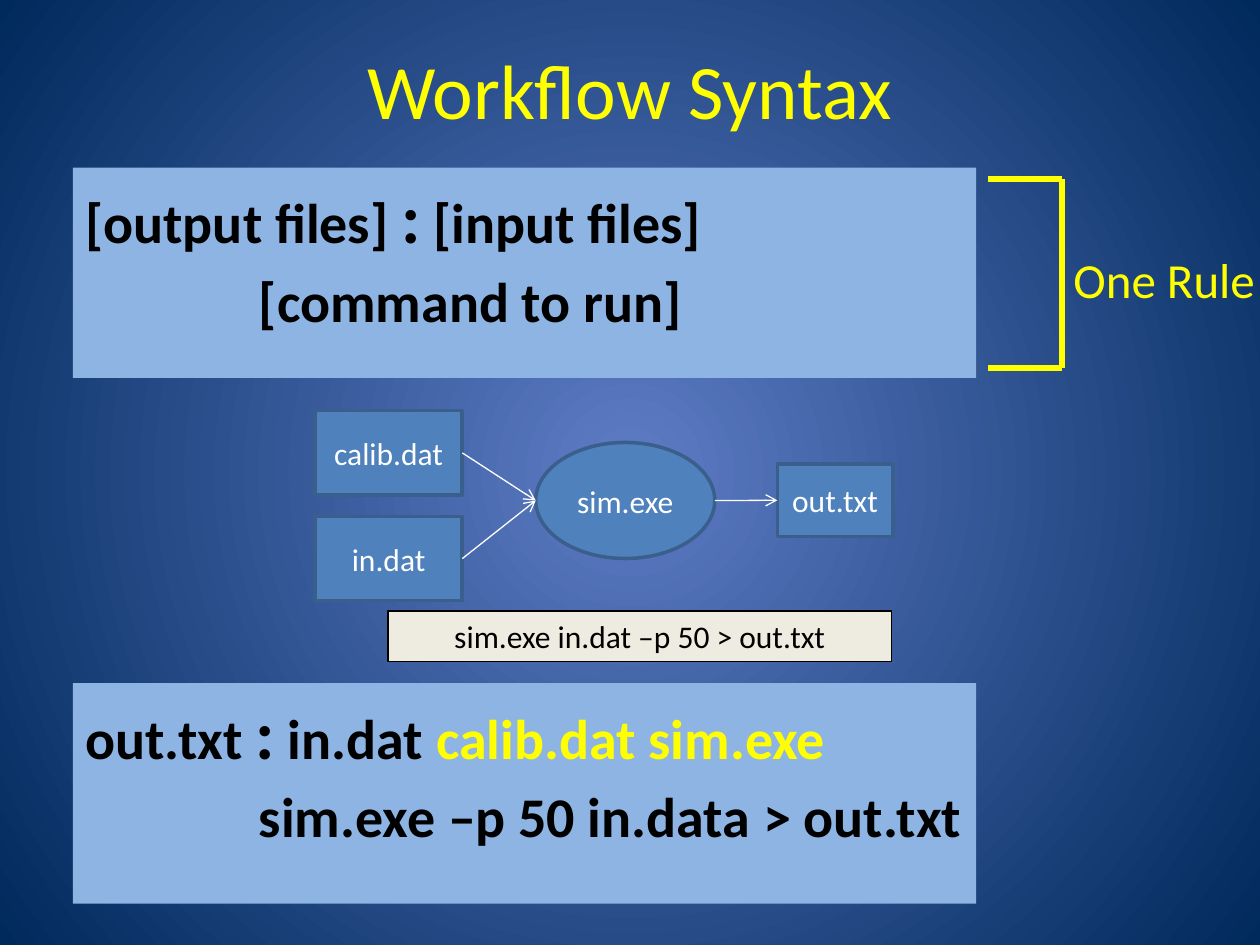
from lxml import etree
from pptx import Presentation
from pptx.dml.color import RGBColor
from pptx.enum.shapes import MSO_CONNECTOR, MSO_SHAPE
from pptx.enum.text import MSO_ANCHOR, PP_ALIGN
from pptx.oxml import parse_xml
from pptx.oxml.ns import qn
from pptx.util import Cm, Pt

RECT, OVAL = MSO_SHAPE.RECTANGLE, MSO_SHAPE.OVAL
LINE = MSO_CONNECTOR.STRAIGHT
CENTER, LEFT = PP_ALIGN.CENTER, PP_ALIGN.LEFT
MIDDLE, TOP = MSO_ANCHOR.MIDDLE, MSO_ANCHOR.TOP
FONT = "Calibri"
YELLOW, BLACK, WHITE = "FFFF00", "000000", "FFFFFF"
BLUE, EDGE, PALE, CREAM = "4F81BD", "3A5F8C", "8EB4E3", "EEECE1"
GLOW = """<a:gradFill xmlns:a="http://schemas.openxmlformats.org/drawingml/2006/main"
 rotWithShape="1"><a:gsLst>
<a:gs pos="0"><a:srgbClr val="5E7CC5"/></a:gs>
<a:gs pos="100000"><a:srgbClr val="00295C"/></a:gs></a:gsLst>
<a:path path="circle"><a:fillToRect l="50000" t="50000" r="50000" b="50000"/></a:path>
</a:gradFill>"""


def color(code):
    """Turn a hex string into a colour."""
    return RGBColor.from_string(code)


def style(run, size, code, bold=False):
    """Format one run."""
    run.font.name = FONT
    run.font.size = Pt(size)
    run.font.bold = bold
    run.font.color.rgb = color(code)


def paint(slide):
    """Give the slide its radial background."""
    fill = slide.background.fill
    fill.solid()
    old = slide.background._cSld.find(".//" + qn("a:solidFill"))
    old.getparent().replace(old, parse_xml(GLOW))


def label(slide, box, text, size, code, align=LEFT, wrap=True):
    """Add a free line of text."""
    shape = slide.shapes.add_textbox(*map(Cm, box))
    frame = shape.text_frame
    frame.text = text
    frame.word_wrap = wrap
    frame.vertical_anchor = MIDDLE
    para = frame.paragraphs[0]
    para.alignment = align
    style(para.runs[0], size, code)


def block(slide, kind, box, fill, edge=None, width=0):
    """Add a filled shape, outlined if an edge colour is given."""
    shape = slide.shapes.add_shape(kind, *map(Cm, box))
    shape.shadow.inherit = False
    shape.fill.solid()
    shape.fill.fore_color.rgb = color(fill)
    if edge:
        shape.line.color.rgb = color(edge)
        shape.line.width = Pt(width)
    else:
        shape.line.fill.background()
    return shape


def node(slide, kind, box, text, fill=BLUE, edge=EDGE, width=2, code=WHITE):
    """Add a shape with a centred caption."""
    shape = block(slide, kind, box, fill, edge, width)
    frame = shape.text_frame
    frame.text = text
    frame.vertical_anchor = MIDDLE
    para = frame.paragraphs[0]
    para.alignment = CENTER
    style(para.runs[0], 18, code)
    return shape


def panel(slide, top, height, head, body):
    """Add a rule panel: a line of coloured runs and an indented command."""
    frame = block(slide, RECT, (1.47, top, 18.21, height), PALE).text_frame
    frame.word_wrap = True
    frame.vertical_anchor = TOP
    frame.margin_right = 0
    rows = [(head, 0, 2), ([(body, 32, BLACK)], 3.5, 5)]
    for index, (parts, indent, gap) in enumerate(rows):
        para = frame.add_paragraph() if index else frame.paragraphs[0]
        para.alignment = LEFT
        para.space_before = Pt(gap)
        para._p.get_or_add_pPr().set("marL", str(Cm(indent)))
        for text, size, code in parts:
            run = para.add_run()
            run.text = text
            style(run, size, code, True)


def line(slide, start, end, code, width, arrow=False):
    """Draw a straight line, with an arrowhead at its end if asked."""
    link = slide.shapes.add_connector(LINE, *start, *end)
    link.line.color.rgb = color(code)
    link.line.width = Pt(width)
    props = link._element.spPr
    if arrow:
        etree.SubElement(props.find(qn("a:ln")), qn("a:tailEnd"), type="arrow")
    etree.SubElement(props, qn("a:effectLst"))


def join(slide, source, target):
    """Point an arrow from the right side of one node to the left of another."""
    start = source.left + source.width, source.top + source.height // 2
    end = target.left, target.top + target.height // 2
    line(slide, start, end, WHITE, 0.75, True)


def bracket(slide, left, top, right, bottom):
    """Draw a bracket that opens to the left."""
    spots = [(left, top), (right, top), (right, bottom), (left, bottom)]
    spots = [(Cm(x), Cm(y)) for x, y in spots]
    for start, end in zip(spots, spots[1:]):
        line(slide, start, end, YELLOW, 3)


def graph(slide):
    """Draw the files, the program and its command."""
    sim = node(slide, OVAL, (10.8, 8.92, 3.61, 2.34), "sim.exe")
    for top, name in ((8.28, "calib.dat"), (10.41, "in.dat")):
        join(slide, node(slide, RECT, (6.35, top, 2.97, 1.7), name), sim)
    join(slide, sim, node(slide, RECT, (15.67, 9.35, 2.33, 1.47), "out.txt"))
    node(slide, RECT, (7.82, 12.32, 10.16, 1.02),
         "sim.exe in.dat –p 50 > out.txt", CREAM, BLACK, 0.75, BLACK)


def main():
    """Build the slide and save it."""
    deck = Presentation()
    deck.slide_width, deck.slide_height = Cm(25.4), Cm(19.05)
    slide = deck.slides.add_slide(deck.slide_layouts[6])
    paint(slide)
    label(slide, (1.27, 0.2, 22.86, 3.18), "Workflow Syntax", 44, YELLOW, CENTER)
    panel(slide, 3.38, 4.24,
          [("[output files] ", 32, BLACK), (":", 40, BLACK),
           (" [input files]", 32, BLACK)],
          "[command to run]")
    graph(slide)
    bracket(slide, 19.91, 3.61, 21.41, 7.42)
    label(slide, (21.39, 4.9, 4.22, 1.45), "One Rule", 28, YELLOW, wrap=False)
    panel(slide, 13.77, 4.45,
          [("out.txt ", 32, BLACK), (":", 40, BLACK), (" in.dat ", 32, BLACK),
           ("calib.dat sim.exe", 32, YELLOW)],
          "sim.exe –p 50 in.data > out.txt")
    deck.save("out.pptx")


if __name__ == "__main__":
    main()
